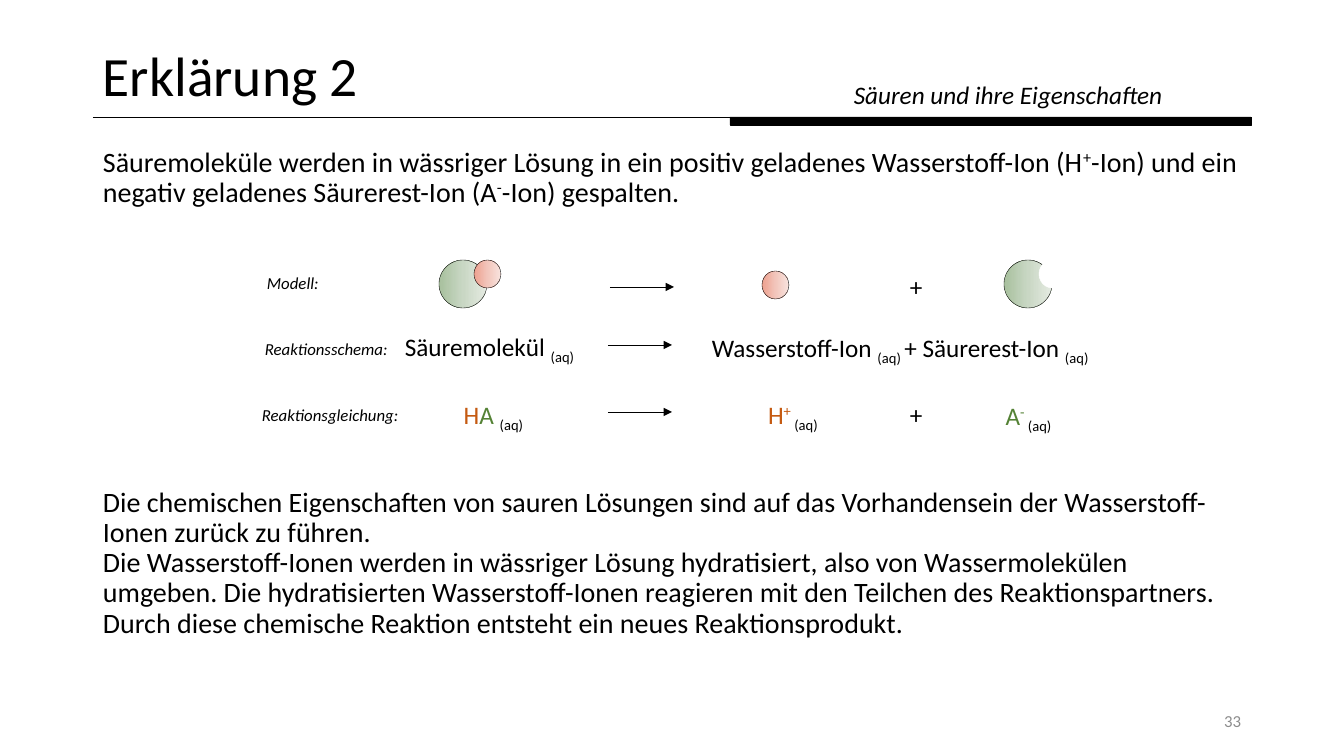
"""Builds a slide that explains how acid molecules split in water."""
from copy import deepcopy

from pptx import Presentation
from pptx import util as u
from pptx.dml import color
from pptx.enum import shapes, text
from pptx.oxml import ns, xmlchemy

SCALE = 12192000 / 1344
COLOURS = {
    "black": "000000", "white": "FFFFFF", "grey": "8C8C8C",
    "orange": "C55A11", "green": "548235",
}
GRADIENTS = {
    "acid": ("A7C09D", "C9D7C4", "E5EBE2"),
    "hydrogen": ("EDA08E", "F2C5BB", "F8E3DE"),
}
LABEL = {"size": u.Pt(12), "italic": True}
SYMBOL = {"size": u.Pt(18)}
BODY = {"size": u.Pt(20)}
CENTRE = {"alignment": text.PP_ALIGN.CENTER}
TIGHT = {"line_spacing": 0.9}
AQ = ("(aq)", "black", -25)


def px(*lengths):
    return [u.Emu(round(length * SCALE)) for length in lengths]


def rgb(value):
    return color.RGBColor.from_string(value)


def apply(target, formats):
    for name, value in formats.items():
        setattr(target, name, value)


class Slide:
    """Holds the style and the current page."""

    def __init__(self, page, font="Calibri"):
        self.page = page
        self.font = font

    def text(self, at, paragraphs, font, layout=None, anchor=text.MSO_ANCHOR.TOP):
        frame = self.page.shapes.add_textbox(*px(*at)).text_frame
        apply(frame, {"word_wrap": True, "vertical_anchor": anchor})
        for index, spans in enumerate(paragraphs):
            para = frame.paragraphs[0] if index == 0 else frame.add_paragraph()
            apply(para, layout or {})
            for words, colour, baseline in spans:
                span = para.add_run()
                span.text = words
                apply(span.font, {"name": self.font, **font})
                span.font.color.rgb = rgb(COLOURS[colour])
                if baseline:
                    span.font._element.set("baseline", str(baseline * 1000))

    def plain(self, at, words, font, layout=None, colour="black", **options):
        self.text(at, [[(words, colour, 0)]], font, layout, **options)

    def shape(self, kind, at, fill, line):
        box = self.page.shapes.add_shape(kind, *px(*at))
        box.shadow.inherit = False
        box.line.color.rgb = rgb(COLOURS[line])
        box.line.width = u.Pt(0.25)
        if fill in COLOURS:
            box.fill.solid()
            box.fill.fore_color.rgb = rgb(COLOURS[fill])
            return
        box.fill.gradient()
        box.fill.gradient_angle = 0
        stops = next(box._element.spPr.iter(ns.qn("a:gsLst")))
        stops.insert(1, deepcopy(stops[0]))
        for stop, position, value in zip(box.fill.gradient_stops, (0, 0.5, 1), GRADIENTS[fill]):
            stop.position = position
            stop.color.rgb = rgb(value)

    def circle(self, left, top, width, height, fill, line="black"):
        self.shape(shapes.MSO_SHAPE.OVAL, (left, top, width, height), fill, line)

    def line(self, left, right, y, arrow=False):
        line = self.page.shapes.add_connector(
            shapes.MSO_CONNECTOR.STRAIGHT, *px(left, y, right, y))
        line.line.color.rgb = rgb(COLOURS["black"])
        line.line.width = u.Pt(0.5)
        if arrow:
            head = xmlchemy.OxmlElement("a:tailEnd")
            head.set("type", "triangle")
            line.line._get_or_add_ln().append(head)
        line._element.spPr.append(xmlchemy.OxmlElement("a:effectLst"))


def add_header(slide):
    middle = text.MSO_ANCHOR.MIDDLE
    slide.line(93, 1252, 117)
    slide.shape(shapes.MSO_SHAPE.RECTANGLE, (730, 117, 521, 8), "black", "black")
    slide.plain((93, 40, 1159, 77), "Erklärung 2", {"size": u.Pt(39.6)}, TIGHT, anchor=middle)
    slide.plain((844, 74, 442, 40), "Säuren und ihre Eigenschaften", {"size": u.Pt(18), "italic": True})
    slide.plain((949, 701, 302, 40), "33", {"size": u.Pt(12)},
                {"alignment": text.PP_ALIGN.RIGHT}, "grey", anchor=middle)


def add_body(slide):
    slide.text((93, 143, 1159, 72), [[
        ("Säuremoleküle werden in wässriger Lösung in ein positiv geladenes Wasserstoff-Ion (H", "black", 0),
        ("+", "black", 30),
        ("-Ion) und ein negativ geladenes Säurerest-Ion (A", "black", 0),
        ("-", "black", 30),
        ("-Ion) gespalten.", "black", 0),
    ]], BODY, TIGHT)
    slide.text((93, 483, 1159, 170), [
        [("Die chemischen Eigenschaften von sauren Lösungen sind auf das Vorhandensein der "
          "Wasserstoff-Ionen zurück zu führen.", "black", 0)],
        [("Die Wasserstoff-Ionen werden in wässriger Lösung hydratisiert, also von Wassermolekülen "
          "umgeben. Die hydratisierten Wasserstoff-Ionen reagieren mit den Teilchen des "
          "Reaktionspartners. Durch diese chemische Reaktion entsteht ein neues "
          "Reaktionsprodukt.", "black", 0)],
    ], BODY, TIGHT)


def add_reaction(slide):
    for left, top, words in ((257, 268, "Modell:"), (255, 334, "Reaktionsschema:"),
                             (252, 400, "Reaktionsgleichung:")):
        slide.plain((left, top, 163, 30), words, LABEL)
    for left, y in ((610, 287), (608, 345), (608, 412)):
        slide.line(left, left + 64, y, arrow=True)
    for top in (266, 394):
        slide.plain((900, top, 31, 40), "+", SYMBOL)

    for left in (439, 1004):
        slide.circle(left, 260, 48, 48, "acid")
    for left, top in ((474, 260), (762, 271)):
        slide.circle(left, top, 27, 28, "hydrogen")
    slide.circle(1039, 260, 27, 28, "white", "white")

    slide.text((395, 326, 197, 40), [[("Säuremolekül ", "black", 0), AQ]], SYMBOL)
    slide.text((702, 327, 459, 40), [[
        ("Wasserstoff-Ion ", "black", 0), ("(aq) ", "black", -25),
        ("+ Säurerest-Ion ", "black", 0), AQ,
    ]], SYMBOL)
    for at, spans in (
        ((395, 394, 197, 40), [("H", "orange", 0), ("A ", "green", 0), AQ]),
        ((687, 394, 212, 40), [("H", "orange", 0), ("+ ", "orange", 30), AQ]),
        ((930, 395, 197, 40), [("A", "green", 0), ("- ", "green", 30), AQ]),
    ):
        slide.text(at, [spans], SYMBOL, CENTRE)


def main():
    deck = Presentation()
    deck.slide_width, deck.slide_height = px(1344, 756)
    slide = Slide(deck.slides.add_slide(deck.slide_layouts[6]))
    add_header(slide)
    add_body(slide)
    add_reaction(slide)
    deck.save("out.pptx")


if __name__ == "__main__":
    main()
